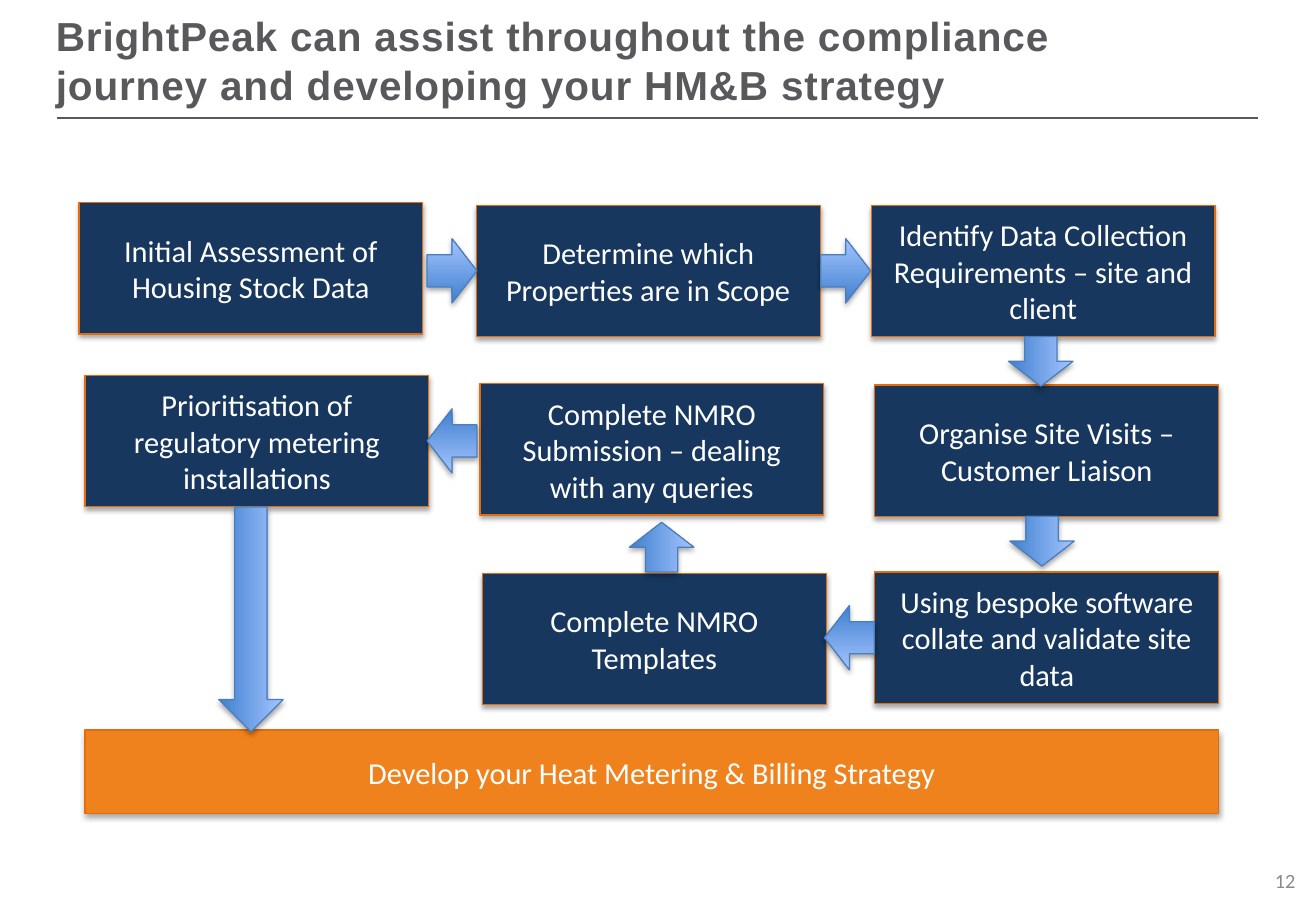
from lxml import etree
from pptx import Presentation
from pptx.dml.color import RGBColor
from pptx.enum.shapes import MSO_CONNECTOR as Connector, MSO_SHAPE as Shape
from pptx.enum.text import MSO_ANCHOR as Anchor, MSO_AUTO_SIZE as AutoSize, PP_ALIGN as Align
from pptx.oxml.ns import qn
from pptx.util import Inches, Pt

WIDTH, HEIGHT = 10.83, 7.5
COLUMN, ROW = 3.25, 1.51
STEP_WIDTH, STEP_HEIGHT = 2.83, 1.08
ARROW_LENGTH, ARROW_WIDTH = 0.41, 0.53
NAVY, ORANGE, ORANGE_EDGE = "17375E", "F0821E", "E46C0A"
BLUE_DARK, BLUE_LIGHT, BLUE_EDGE = "3F80CE", "A4C4FF", "4B7EBC"
GREY, PALE_GREY, WHITE = "58595B", "898989", "FFFFFF"

# column, row, nudge right, nudge down, wording
STEPS = [
    (0, 0, -0.05, -0.02, "Initial Assessment of Housing Stock Data"),
    (1, 0, -0.03, 0, "Determine which Properties are in Scope"),
    (2, 0, -0.03, 0, "Identify Data Collection Requirements – site and client"),
    (2, 1, 0, -0.03, "Organise Site Visits – Customer Liaison"),
    (2, 2, 0, 0, "Using bespoke software collate and validate site data"),
    (1, 2, 0.02, 0.01, "Complete NMRO Templates"),
    (1, 1, 0, -0.04, "Complete NMRO Submission – dealing with any queries"),
    (0, 1, 0, -0.11, "Prioritisation of regulatory metering installations"),
]
# column, row, nudge right, nudge down, rotation, length
ARROWS = [
    (0.5, 0, -0.02, 0, 0, ARROW_LENGTH),
    (1.5, 0, -0.03, 0, 0, ARROW_LENGTH),
    (2, 0.5, -0.05, -0.01, 90, ARROW_LENGTH),
    (2, 1.5, -0.04, -0.04, 90, ARROW_LENGTH),
    (1.5, 2, 0, 0, 180, ARROW_LENGTH),
    (1, 1.5, 0.08, 0.01, 270, ARROW_LENGTH),
    (0.5, 1, -0.02, -0.11, 180, ARROW_LENGTH),
    (0, 1.9, -0.05, 0, 90, 1.85),
]


def colour(code):
    """Turn a hex string into a colour."""
    return RGBColor.from_string(code)


def style_font(font, size, code, name="Calibri"):
    """Set the size, colour and typeface of a font."""
    font.size, font.name = Pt(size), name
    font.color.rgb = colour(code)


def add_shadow(shape):
    """Give a shape a soft shadow below it."""
    shape.shadow.inherit = False
    effects = shape._element.spPr.find(qn("a:effectLst"))
    shadow = etree.SubElement(effects, qn("a:outerShdw"), blurRad="40000",
                              dist="23000", dir="5400000", rotWithShape="0")
    black = etree.SubElement(shadow, qn("a:srgbClr"), val="000000")
    etree.SubElement(black, qn("a:alpha"), val="35000")


def add_block(page, preset, box, edge):
    """Place an outlined, shadowed shape in a box."""
    shape = page.shapes.add_shape(preset, *map(Inches, box))
    shape.line.color.rgb = colour(edge)
    shape.line.width = Pt(0.75)
    add_shadow(shape)
    return shape


def add_panel(page, box, wording, fill):
    """Place a filled rectangle with centred white wording."""
    panel = add_block(page, Shape.RECTANGLE, box, ORANGE_EDGE)
    panel.fill.solid()
    panel.fill.fore_color.rgb = colour(fill)
    frame = panel.text_frame
    frame.word_wrap, frame.vertical_anchor = True, Anchor.MIDDLE
    para = frame.paragraphs[0]
    para.text, para.alignment = wording, Align.CENTER
    style_font(para.font, 18, WHITE)


def add_arrow(page, centre_x, centre_y, rotation, length):
    """Place a gradient block arrow around a centre point."""
    box = (centre_x - length / 2, centre_y - ARROW_WIDTH / 2, length, ARROW_WIDTH)
    arrow = add_block(page, Shape.RIGHT_ARROW, box, BLUE_EDGE)
    arrow.rotation = rotation
    if rotation == 270:
        arrow._element.spPr.find(qn("a:xfrm")).set("flipV", "1")
    arrow.fill.gradient()
    arrow.fill.gradient_angle = 90
    for stop, code in zip(arrow.fill.gradient_stops, (BLUE_DARK, BLUE_LIGHT)):
        stop.color.rgb = colour(code)


def add_heading(page, left, top, width, height):
    """Fill the title placeholder and rule a line beneath it."""
    title = page.shapes.title
    title.left, title.top, title.width, title.height = map(Inches, (left, top, width, height))
    frame = title.text_frame
    frame.word_wrap, frame.auto_size = True, AutoSize.NONE
    frame.vertical_anchor = Anchor.TOP
    para = frame.paragraphs[0]
    span = para.add_run()
    span.text = ("BrightPeak can assist throughout the compliance "
                 "journey and developing your HM&B strategy")
    para.alignment = Align.LEFT
    style_font(span.font, 24, GREY, "Arial")
    span.font.bold = True
    span._r.get_or_add_rPr().set("spc", "50")
    line_left, line_top = left + 0.11, top + height + 0.07
    rule = page.shapes.add_connector(
        Connector.STRAIGHT,
        *map(Inches, (line_left, line_top, WIDTH - 0.48, line_top)))
    rule.line.color.rgb = colour(GREY)
    rule.line.width = Pt(1)
    etree.SubElement(rule._element.spPr, qn("a:effectLst"))


def add_journey(page, left, top):
    """Lay the steps, the strategy bar and the arrows on a grid."""
    for column, row, right, down, wording in STEPS:
        box = (left + column * COLUMN + right, top + row * ROW + down,
               STEP_WIDTH, STEP_HEIGHT)
        add_panel(page, box, wording, NAVY)
    bar = (left, top + 2 * ROW + 1.3, 2 * COLUMN + STEP_WIDTH, 0.69)
    add_panel(page, bar, "Develop your Heat Metering & Billing Strategy", ORANGE)
    for column, row, right, down, rotation, length in ARROWS:
        add_arrow(page, left + STEP_WIDTH / 2 + column * COLUMN + right,
                  top + STEP_HEIGHT / 2 + row * ROW + down, rotation, length)


def add_page_number(page, left, top, width, height):
    """Write the page number at the right of a box."""
    box = page.shapes.add_textbox(*map(Inches, (left, top, width, height)))
    frame = box.text_frame
    frame.word_wrap, frame.vertical_anchor = True, Anchor.MIDDLE
    para = frame.paragraphs[0]
    para.text, para.alignment = "12", Align.RIGHT
    style_font(para.font, 12, PALE_GREY)


def main():
    """Build the deck and save it."""
    deck = Presentation()
    deck.slide_width, deck.slide_height = Inches(WIDTH), Inches(HEIGHT)
    page = deck.slides.add_slide(deck.slide_layouts[5])
    add_heading(page, 0.36, 0.04, 8.7, 0.86)
    add_journey(page, 0.7, 1.69)
    add_page_number(page, 8.23, 7.05, 2.53, 0.4)
    deck.save("out.pptx")


if __name__ == "__main__":
    main()
